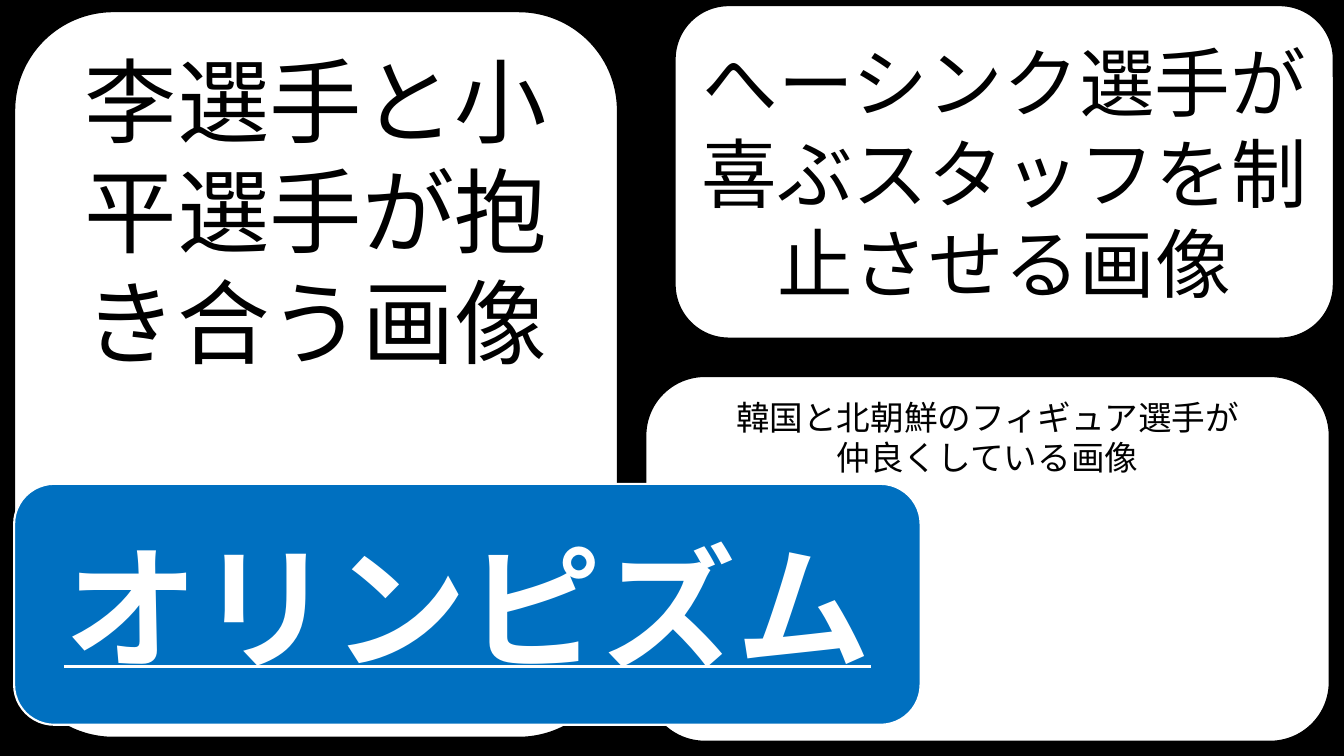
from lxml import etree
from pptx import Presentation
from pptx.dml.color import RGBColor
from pptx.enum.shapes import MSO_SHAPE
from pptx.enum.text import MSO_ANCHOR, PP_ALIGN
from pptx.oxml.ns import qn
from pptx.util import Inches, Pt

ROUNDED = MSO_SHAPE.ROUNDED_RECTANGLE
TOP, MIDDLE = MSO_ANCHOR.TOP, MSO_ANCHOR.MIDDLE
CENTER = PP_ALIGN.CENTER
COLORS = {"black": "000000", "white": "FFFFFF", "blue": "0070C0"}
BODY_FONT, TITLE_FONT = "Noto Sans CJK JP", "League Spartan"
PHOTO_STYLE = {"fill": "white", "line": "black", "line_width": 4.5, "text": "black"}
TITLE_STYLE = {"fill": "blue", "line": "white", "line_width": 1.5, "text": "white"}


class SlideBuilder:
    """Draws styled panels on the current slide."""

    def __init__(self, slide):
        self.slide = slide

    def color(self, name):
        return RGBColor.from_string(COLORS[name])

    def background(self, name):
        fill = self.slide.background.fill
        fill.solid()
        fill.fore_color.rgb = self.color(name)

    def panel(self, box, lines, style, anchor, font):
        shape = self.slide.shapes.add_shape(ROUNDED, *(Inches(length) for length in box))
        shape.shadow.inherit = False
        shape.fill.solid()
        shape.fill.fore_color.rgb = self.color(style["fill"])
        shape.line.color.rgb = self.color(style["line"])
        shape.line.width = Pt(style["line_width"])
        frame = shape.text_frame
        frame.word_wrap = True
        frame.vertical_anchor = anchor
        for index, line in enumerate(lines):
            paragraph = frame.add_paragraph() if index else frame.paragraphs[0]
            paragraph.alignment = CENTER
            self.run(paragraph, line, style["text"], font)

    def run(self, paragraph, text, color, font):
        run = paragraph.add_run()
        run.text = text
        run.font.color.rgb = self.color(color)
        for attribute, value in font.items():
            setattr(run.font, attribute, value)
        properties = run.font._element
        etree.SubElement(properties, qn("a:ea")).set("typeface", font["name"])


def main():
    presentation = Presentation()
    presentation.slide_width = Inches(13.33)
    presentation.slide_height = Inches(7.5)
    builder = SlideBuilder(presentation.slides.add_slide(presentation.slide_layouts[6]))
    builder.background("black")

    photo_panels = [
        ((0.12, 0.09, 6.03, 7.25), ["李選手と小平選手が抱き合う画像"], TOP, 66),
        ((6.67, 0.03, 6.58, 3.35), ["へーシンク選手が喜ぶスタッフを制止させる画像"], MIDDLE, 54),
        ((6.38, 3.71, 6.83, 3.67), ["韓国と北朝鮮のフィギュア選手が", "仲良くしている画像"], TOP, 24),
    ]
    for box, lines, anchor, size in photo_panels:
        builder.panel(box, lines, PHOTO_STYLE, anchor, {"name": BODY_FONT, "size": Pt(size)})

    title_font = {"name": TITLE_FONT, "size": Pt(96), "bold": True, "underline": True}
    builder.panel((0.14, 4.8, 8.99, 2.39), ["オリンピズム"], TITLE_STYLE, MIDDLE, title_font)

    presentation.save("out.pptx")


if __name__ == "__main__":
    main()
